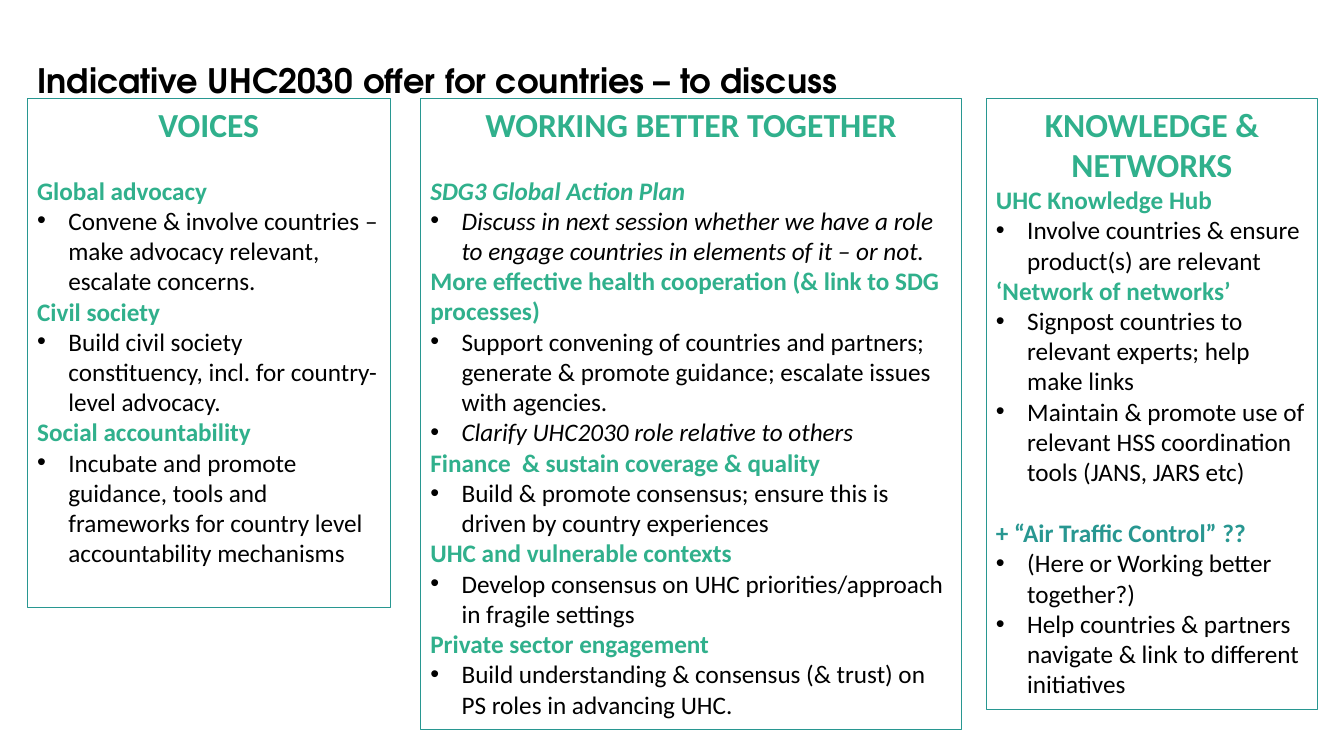
from dataclasses import dataclass

import pptx
import pptx.dml.color
import pptx.enum.shapes
import pptx.enum.text
import pptx.oxml.ns
import pptx.util
from lxml import etree

ALIGN = pptx.enum.text.PP_ALIGN
EMU_PER_PX = 9144


def px(length):
    return pptx.util.Emu(length * EMU_PER_PX)


@dataclass(frozen=True)
class Theme:
    green: str = "30B08C"
    teal: str = "289791"
    black: str = "000000"
    title_font: str = "TeX Gyre Adventor"
    body_font: str = "Calibri"
    large: int = 24
    body: int = 18
    gap: int = 22
    indent: int = 31
    border: float = 0.75


class SlideBuilder:
    def __init__(self, slide, theme):
        self.slide = slide
        self.theme = theme

    def add_run(self, paragraph, text, size, color, font, bold=False, italic=False):
        run = paragraph.add_run()
        run.text = text
        run.font.size = pptx.util.Pt(size)
        run.font.color.rgb = pptx.dml.color.RGBColor.from_string(color)
        run.font.name = font
        run.font.bold = bold
        run.font.italic = italic

    def add_title(self, text, left, top, width, height):
        title = self.slide.shapes.title
        title.left, title.top = px(left), px(top)
        title.width, title.height = px(width), px(height)
        frame = title.text_frame
        frame.word_wrap = True
        frame.auto_size = pptx.enum.text.MSO_AUTO_SIZE.NONE
        frame.vertical_anchor = pptx.enum.text.MSO_ANCHOR.TOP
        paragraph = frame.paragraphs[0]
        paragraph.alignment = ALIGN.LEFT
        paragraph.line_spacing = 0.9
        self.add_run(paragraph, text, self.theme.large, self.theme.black,
                     self.theme.title_font, bold=True)

    def add_bullet(self, paragraph):
        properties = paragraph._p.get_or_add_pPr()
        properties.set("marL", str(px(self.theme.indent)))
        properties.set("indent", str(-px(self.theme.indent)))
        qualified = pptx.oxml.ns.qn
        etree.SubElement(properties, qualified("a:buFont")).set("typeface", "Arial")
        etree.SubElement(properties, qualified("a:buChar")).set("char", "•")

    def add_entry(self, frame, text, bullet=False, italic=False, gap=False, color=None):
        paragraph = frame.add_paragraph()
        paragraph.alignment = ALIGN.LEFT
        if bullet:
            self.add_bullet(paragraph)
        if gap:
            paragraph.space_before = pptx.util.Pt(self.theme.gap)
        default_color = self.theme.black if bullet else self.theme.green
        self.add_run(paragraph, text, self.theme.body, color or default_color,
                     self.theme.body_font, bold=not bullet, italic=italic)

    def add_column(self, heading, left, top, width, height, entries):
        shape = self.slide.shapes.add_shape(
            pptx.enum.shapes.MSO_SHAPE.RECTANGLE, px(left), px(top), px(width), px(height))
        shape.shadow.inherit = False
        shape.fill.background()
        shape.line.color.rgb = pptx.dml.color.RGBColor.from_string(self.theme.teal)
        shape.line.width = pptx.util.Pt(self.theme.border)
        frame = shape.text_frame
        frame.word_wrap = True
        frame.auto_size = pptx.enum.text.MSO_AUTO_SIZE.SHAPE_TO_FIT_TEXT
        frame.vertical_anchor = pptx.enum.text.MSO_ANCHOR.TOP
        paragraph = frame.paragraphs[0]
        paragraph.alignment = ALIGN.CENTER
        self.add_run(paragraph, heading, self.theme.large, self.theme.green,
                     self.theme.body_font, bold=True)
        for text, options in entries:
            self.add_entry(frame, text, **options)


def topic(text, **options):
    return text, options


def point(text, **options):
    return text, {"bullet": True, **options}


THEME = Theme()
COLUMN_TOP = 98

VOICES = [
    topic("Global advocacy", gap=True),
    point("Convene & involve countries – make advocacy relevant, escalate concerns."),
    topic("Civil society"),
    point("Build civil society constituency, incl. for country-level advocacy."),
    topic("Social accountability"),
    point("Incubate and promote guidance, tools and frameworks for country level "
          "accountability mechanisms"),
]

WORKING_TOGETHER = [
    topic("SDG3 Global Action Plan", gap=True, italic=True),
    point("Discuss in next session whether we have a role to engage countries in "
          "elements of it – or not.", italic=True),
    topic("More effective health cooperation (& link to SDG processes)"),
    point("Support convening of countries and partners; generate & promote guidance; "
          "escalate issues with agencies."),
    point("Clarify UHC2030 role relative to others", italic=True),
    topic("Finance  & sustain coverage & quality"),
    point("Build & promote consensus; ensure this is driven by country experiences"),
    topic("UHC and vulnerable contexts"),
    point("Develop consensus on UHC priorities/approach in fragile settings"),
    topic("Private sector engagement"),
    point("Build understanding & consensus (& trust) on PS roles in advancing UHC."),
]

KNOWLEDGE = [
    topic("UHC Knowledge Hub"),
    point("Involve countries & ensure product(s) are relevant"),
    topic("‘Network of networks’"),
    point("Signpost countries to relevant experts; help make links"),
    point("Maintain & promote use of relevant HSS coordination tools (JANS, JARS etc)"),
    topic("+ “Air Traffic Control” ??", gap=True, color=THEME.teal),
    point("(Here or Working better together?)"),
    point("Help countries & partners navigate & link to different initiatives"),
]

COLUMNS = [
    ("VOICES", 27, 360, 505, VOICES),
    ("WORKING BETTER TOGETHER", 417, 537, 626, WORKING_TOGETHER),
    ("KNOWLEDGE & NETWORKS", 978, 329, 606, KNOWLEDGE),
]


def main():
    presentation = pptx.Presentation()
    presentation.slide_width, presentation.slide_height = px(1333), px(750)
    title_only = presentation.slide_layouts.get_by_name("Title Only")
    builder = SlideBuilder(presentation.slides.add_slide(title_only), THEME)
    builder.add_title("Indicative UHC2030 offer for countries – to discuss", 27, 59, 1269, 57)
    for heading, left, width, height, entries in COLUMNS:
        builder.add_column(heading, left, COLUMN_TOP, width, height, entries)
    presentation.save("out.pptx")


if __name__ == "__main__":
    main()
